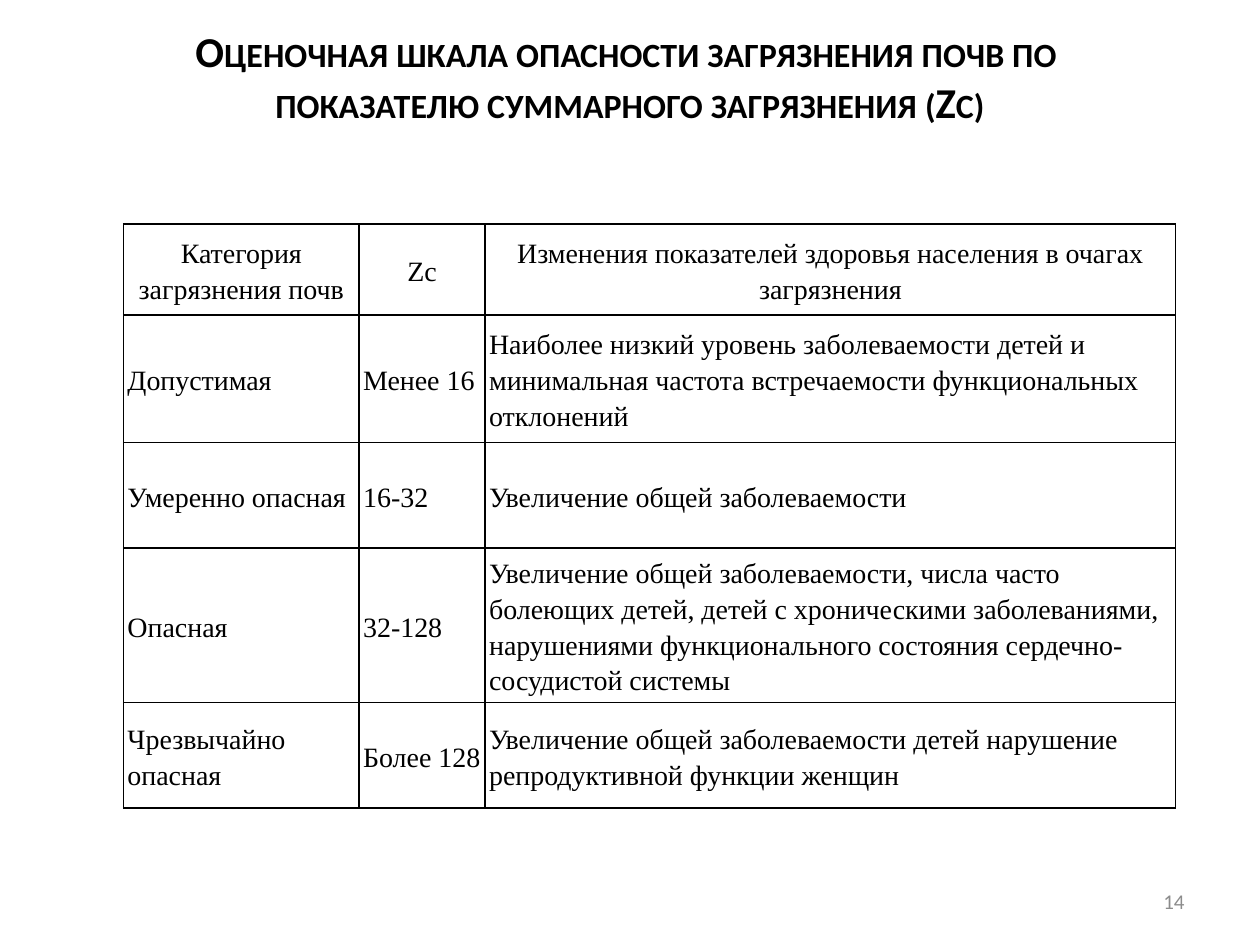
from lxml import etree
from pptx import Presentation
from pptx import util as u
from pptx.dml.color import RGBColor
from pptx.enum import text
from pptx.oxml.ns import qn

BLACK, WHITE, GRAY = "000000", "FFFFFF", "8C8C8C"
TITLE_LINES = [
    "Оценочная шкала опасности загрязнения почв по ",
    "показателю суммарного загрязнения (Zc)",
]
COLUMN_WIDTHS = [4.75, 2.54, 13.92]
ROW_HEIGHTS = [1.83, 2.57, 2.13, 2.57, 2.13]
ROWS = [
    ("Категория загрязнения почв", "Zc",
     "Изменения показателей здоровья населения в очагах загрязнения"),
    ("Допустимая", "Менее 16",
     "Наиболее низкий уровень заболеваемости детей и минимальная частота "
     "встречаемости функциональных отклонений"),
    ("Умеренно опасная", "16-32", "Увеличение общей заболеваемости"),
    ("Опасная", "32-128",
     "Увеличение общей заболеваемости, числа часто болеющих детей, детей с "
     "хроническими заболеваниями, нарушениями функционального состояния "
     "сердечно-сосудистой системы"),
    ("Чрезвычайно опасная", "Более 128",
     "Увеличение общей заболеваемости детей нарушение репродуктивной функции женщин"),
]


def color(value):
    return RGBColor.from_string(value)


def add_run(paragraph, content, font, size, fill):
    run = paragraph.add_run()
    run.text = content
    run.font.name = font
    run.font.size = u.Pt(size)
    run.font.color.rgb = color(fill)
    return run


def add_text_box(slide, box, anchor, alignment):
    frame = slide.shapes.add_textbox(*map(u.Cm, box)).text_frame
    frame.word_wrap = True
    frame.vertical_anchor = anchor
    paragraph = frame.paragraphs[0]
    paragraph.alignment = alignment
    return frame, paragraph


def add_title(slide, box):
    frame, paragraph = add_text_box(slide, box, text.MSO_ANCHOR.TOP, text.PP_ALIGN.CENTER)
    frame.margin_top = 0
    for index, line in enumerate(TITLE_LINES):
        if index:
            paragraph.add_line_break()
        run = add_run(paragraph, line, "Calibri", 24.3, BLACK)
        run.font.bold = True
        run.font._element.set("cap", "small")


def set_borders(cell):
    properties = cell._tc.get_or_add_tcPr()
    for position, side in enumerate(("lnL", "lnR", "lnT", "lnB")):
        line = etree.Element(qn(f"a:{side}"), w=str(u.Pt(1)))
        fill = etree.SubElement(line, qn("a:solidFill"))
        etree.SubElement(fill, qn("a:srgbClr"), val=BLACK)
        properties.insert(position, line)


def fill_cell(cell, content, alignment):
    cell.fill.solid()
    cell.fill.fore_color.rgb = color(WHITE)
    cell.margin_left = cell.margin_right = u.Cm(0.08)
    cell.margin_top = cell.margin_bottom = 0
    cell.vertical_anchor = text.MSO_ANCHOR.MIDDLE
    set_borders(cell)
    paragraph = cell.text_frame.paragraphs[0]
    paragraph.alignment = alignment
    paragraph.line_spacing = 1.15
    add_run(paragraph, content, "Times New Roman", 16, BLACK)


def add_scale_table(slide, left, top):
    box = (left, top, sum(COLUMN_WIDTHS), sum(ROW_HEIGHTS))
    table = slide.shapes.add_table(len(ROWS), len(COLUMN_WIDTHS), *map(u.Cm, box)).table
    table.horz_banding = False
    table.first_row = False
    for column, width in zip(table.columns, COLUMN_WIDTHS):
        column.width = u.Cm(width)
    for index, (row, height, contents) in enumerate(zip(table.rows, ROW_HEIGHTS, ROWS)):
        row.height = u.Cm(height)
        alignment = text.PP_ALIGN.LEFT if index else text.PP_ALIGN.CENTER
        for cell, content in zip(row.cells, contents):
            fill_cell(cell, content, alignment)


def add_page_number(slide, box):
    _, paragraph = add_text_box(slide, box, text.MSO_ANCHOR.MIDDLE, text.PP_ALIGN.RIGHT)
    add_run(paragraph, "14", "Calibri", 12, GRAY)


def main():
    presentation = Presentation()
    presentation.slide_width = u.Cm(25.4)
    presentation.slide_height = u.Cm(19.05)
    slide = presentation.slides.add_slide(presentation.slide_layouts[6])
    add_title(slide, (1.27, 0.51, 22.86, 3.43))
    add_scale_table(slide, 2.49, 4.52)
    add_page_number(slide, (18.2, 17.66, 5.93, 1.01))
    presentation.save("out.pptx")


if __name__ == "__main__":
    main()
